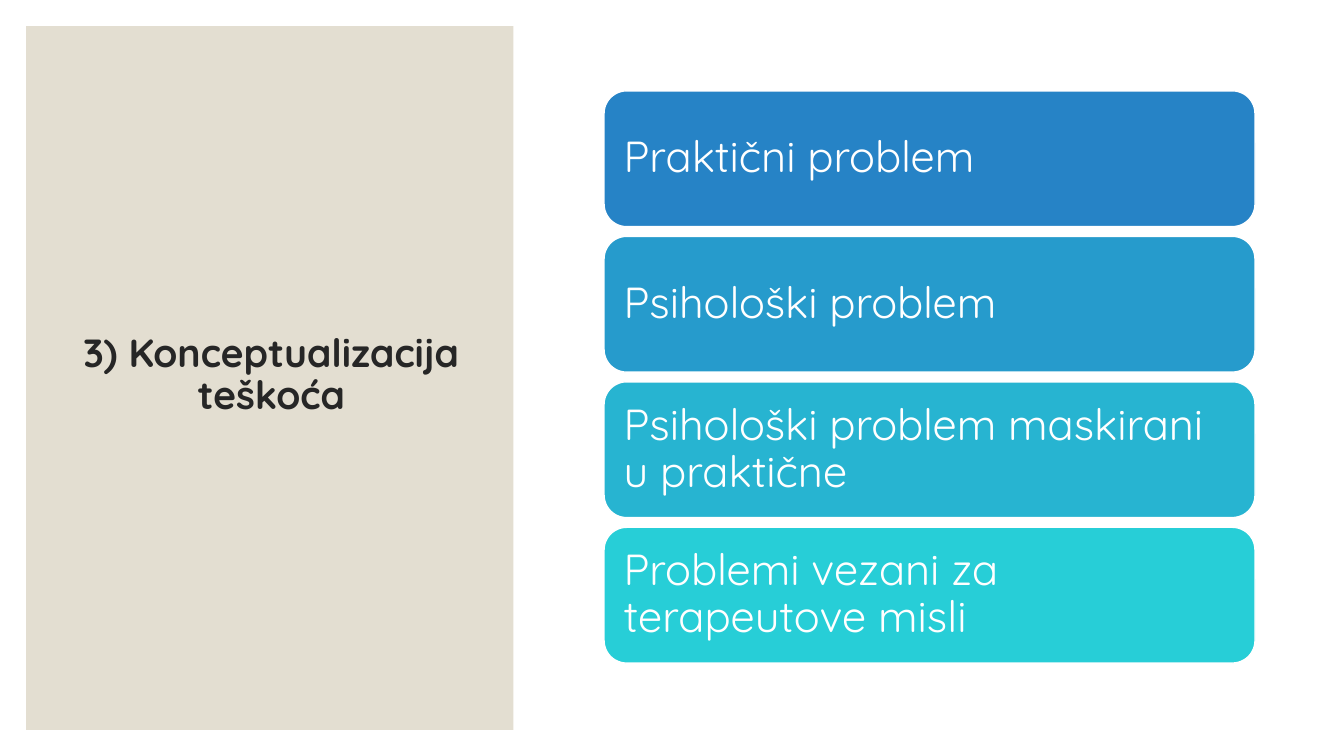
from pptx import Presentation
from pptx.dml.color import RGBColor
from pptx.enum.shapes import MSO_SHAPE as Preset
from pptx.enum.text import MSO_ANCHOR as Anchor, PP_ALIGN as Align
from pptx.util import Pt

WHITE = RGBColor(0xFF, 0xFF, 0xFF)
INK = RGBColor(0x26, 0x26, 0x26)
SAND = RGBColor(0xE3, 0xDE, 0xD1)
FONT = "Quicksand"

TITLE = "3) Konceptualizacija teškoća"
PROBLEMS = [
    ("Praktični problem", RGBColor(0x26, 0x83, 0xC6)),
    ("Psihološki problem", RGBColor(0x26, 0x9B, 0xCC)),
    ("Psihološki problem maskirani u praktične", RGBColor(0x27, 0xB4, 0xD1)),
    ("Problemi vezani za terapeutove misli", RGBColor(0x27, 0xCE, 0xD7)),
]

SLIDE_WIDTH, SLIDE_HEIGHT = 960, 540
PANEL = (18.7, 18.7, 348, 502.6)
TITLE_AREA = (45.4, 43.9, 296.6, 449.3)
CARD_LEFT, CARD_TOP, CARD_WIDTH, CARD_HEIGHT = 431.5, 64.9, 465, 97
CARD_STEP = 103.92
CARD_MARGIN = 9.3


def add_block(slide, preset, area, fill):
    block = slide.shapes.add_shape(preset, *map(Pt, area))
    block.shadow.inherit = False
    block.fill.solid()
    block.fill.fore_color.rgb = fill
    block.line.fill.background()
    return block


def write(box, text, size, color, align, bold=False):
    frame = box.text_frame
    frame.word_wrap = True
    frame.vertical_anchor = Anchor.MIDDLE
    para = frame.paragraphs[0]
    para.alignment = align
    para.line_spacing = 0.9
    span = para.add_run()
    span.text = text
    span.font.name = FONT
    span.font.size = Pt(size)
    span.font.bold = bold
    span.font.color.rgb = color


def add_card(slide, index, text, fill):
    top = CARD_TOP + index * CARD_STEP
    area = (CARD_LEFT, top, CARD_WIDTH, CARD_HEIGHT)
    card = add_block(slide, Preset.ROUNDED_RECTANGLE, area, fill)
    card.line.color.rgb = WHITE
    card.line.width = Pt(1)
    frame = card.text_frame
    frame.margin_left = frame.margin_right = Pt(CARD_MARGIN)
    frame.margin_top = frame.margin_bottom = Pt(CARD_MARGIN)
    write(card, text, 31, WHITE, Align.LEFT)


def main():
    deck = Presentation()
    deck.slide_width, deck.slide_height = Pt(SLIDE_WIDTH), Pt(SLIDE_HEIGHT)
    page = deck.slides.add_slide(deck.slide_layouts[6])

    add_block(page, Preset.RECTANGLE, (0, 0, SLIDE_WIDTH, SLIDE_HEIGHT), WHITE)
    add_block(page, Preset.RECTANGLE, PANEL, SAND)
    title = page.shapes.add_textbox(*map(Pt, TITLE_AREA))
    write(title, TITLE, 28, INK, Align.CENTER, bold=True)

    for index, (text, fill) in enumerate(PROBLEMS):
        add_card(page, index, text, fill)

    deck.save("out.pptx")


if __name__ == "__main__":
    main()
